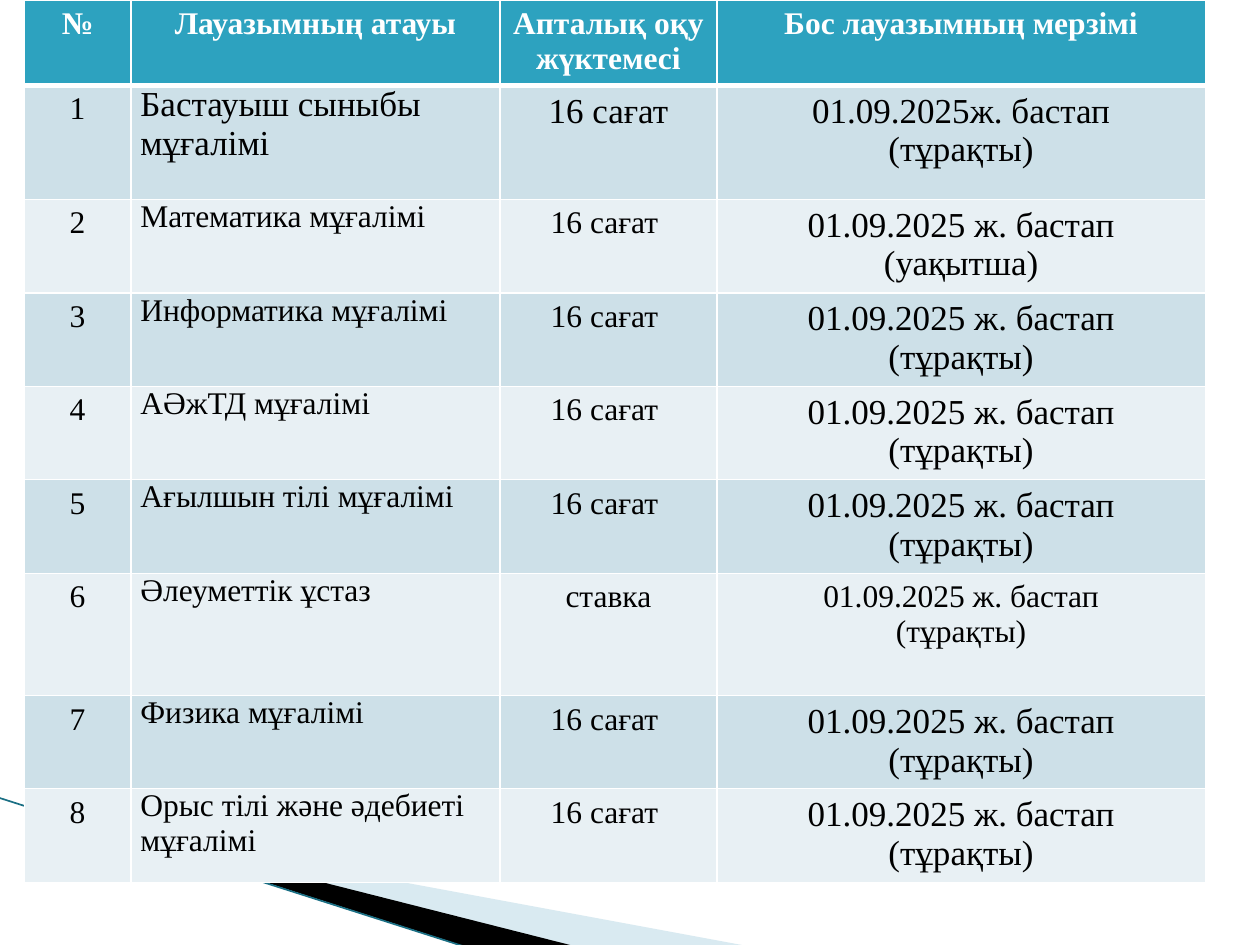
import pptx
import pptx.dml.color
import pptx.enum.shapes
import pptx.enum.text
import pptx.oxml
import pptx.oxml.ns
import pptx.util
from pptx.dml.color import RGBColor
from pptx.util import Cm, Pt

WHITE = RGBColor(0xFF, 0xFF, 0xFF)
BLACK = RGBColor(0, 0, 0)
TEAL = RGBColor(0x2D, 0xA2, 0xBF)
ROW_FILLS = [RGBColor(0xCD, 0xE0, 0xE8), RGBColor(0xE8, 0xF0, 0xF4)]
PALE_BLUE = RGBColor(0xA0, 0xCB, 0xDC)
DARK_TEAL = RGBColor(0x1A, 0x6F, 0x84)
FONT = "Times New Roman"

# Content: post, weekly load, term, then the point sizes of those three
HEADER = ["№", "Лауазымның атауы", "Апталық оқу жүктемесі", "Бос лауазымның мерзімі"]
HOURS = "16 сағат "
PERMANENT = "01.09.2025 ж. бастап\n(тұрақты)"
TEMPORARY = "01.09.2025 ж. бастап\n(уақытша)"
USUAL = (18, 18, 20)
VACANCIES = [
    ("Бастауыш сыныбы мұғалімі", "16 сағат", "01.09.2025ж. бастап\n(тұрақты)", (20, 20, 20)),
    ("Математика мұғалімі", HOURS, TEMPORARY, USUAL),
    ("Информатика мұғалімі", HOURS, PERMANENT, USUAL),
    ("АӘжТД мұғалімі", HOURS, PERMANENT, USUAL),
    ("Ағылшын тілі мұғалімі", HOURS, PERMANENT, USUAL),
    ("Әлеуметтік ұстаз", "ставка", PERMANENT, (18, 18, 18)),
    ("Физика мұғалімі", HOURS, PERMANENT, USUAL),
    ("Орыс тілі және әдебиеті мұғалімі", HOURS, PERMANENT, USUAL),
]
COLUMN_WIDTHS = [2.15, 7.44, 4.37, 9.85]
ROW_HEIGHTS = [1.72, 2.3, 1.89, 1.88, 1.88, 1.89, 2.46, 1.88, 1.89]

# Corner decoration, in cm: frame, outline, colour, opacity in percent
BANDS = [
    ((1.98, 13.89, 10.57, 4.01),
     [(1.4, 16.54), (15.11, 19.08), (11.58, 19.08), (1.4, 16.51)], PALE_BLUE, 40),
    ((-0.15, 16.08, 10.57, 2.34),
     [(1.35, 16.48), (11.61, 19.08), (9.45, 19.1), (1.37, 16.51)], BLACK, 100),
]


def draw_band(slide, frame, outline, color, opacity):
    points = [(Cm(x), Cm(y)) for x, y in outline]
    builder = slide.shapes.build_freeform(*points[0])
    builder.add_line_segments(points[1:])
    band = builder.convert_to_shape()
    band.shadow.inherit = False
    band.line.fill.background()
    band.fill.solid()
    band.fill.fore_color.rgb = color

    # The outline runs past its frame, so its points are counted from the frame
    band.left, band.top, band.width, band.height = map(Cm, frame)
    outline_path = band._element.spPr.find(".//" + pptx.oxml.ns.qn("a:path"))
    outline_path.set("w", str(int(band.width)))
    outline_path.set("h", str(int(band.height)))
    corners = outline_path.findall(".//" + pptx.oxml.ns.qn("a:pt"))
    for corner, (x, y) in zip(corners, points + points[:1]):
        corner.set("x", str(int(x - band.left)))
        corner.set("y", str(int(y - band.top)))

    if opacity < 100:
        srgb = band._element.spPr.find(".//" + pptx.oxml.ns.qn("a:srgbClr"))
        srgb.append(pptx.oxml.parse_xml(
            f'<a:alpha {pptx.oxml.ns.nsdecls("a")} val="{opacity * 1000}"/>'))


def set_borders(cell, row):
    widths = {"L": 1, "R": 1, "T": 3 if row == 1 else 1, "B": 3 if row == 0 else 1}
    properties = cell._tc.get_or_add_tcPr()
    for side, width in widths.items():
        properties.append(pptx.oxml.parse_xml(
            f'<a:ln{side} {pptx.oxml.ns.nsdecls("a")} w="{Pt(width)}">'
            f'<a:solidFill><a:srgbClr val="{WHITE}"/></a:solidFill></a:ln{side}>'))


def fill_cell(cell, row, column, text, size):
    is_header = row == 0
    is_post = column == 1 and not is_header
    set_borders(cell, row)
    cell.fill.solid()
    cell.fill.fore_color.rgb = TEAL if is_header else ROW_FILLS[(row - 1) % 2]
    cell.margin_left = cell.margin_right = Cm(0.19 if is_post else 0.24)
    cell.margin_top = cell.margin_bottom = Cm(0 if is_post else 0.13)
    cell.text_frame.text = text
    align = pptx.enum.text.PP_ALIGN
    for paragraph in cell.text_frame.paragraphs:
        paragraph.alignment = align.LEFT if is_post else align.CENTER
        for run in paragraph.runs:
            run.font.name = FONT
            run.font.size = Pt(size)
            run.font.bold = is_header
            run.font.color.rgb = WHITE if is_header else BLACK


def main():
    deck = pptx.Presentation()
    deck.slide_width, deck.slide_height = Cm(25.4), Cm(19.05)
    slide = deck.slides.add_slide(deck.slide_layouts[6])

    # Decoration behind the table
    for band in BANDS:
        draw_band(slide, *band)
    edge = slide.shapes.add_connector(
        pptx.enum.shapes.MSO_CONNECTOR.STRAIGHT, Cm(-0.03), Cm(16.08), Cm(9.42), Cm(19.1))
    edge.line.color.rgb = DARK_TEAL
    edge.line.width = Pt(0.95)
    edge._element.spPr.append(
        pptx.oxml.parse_xml(f'<a:effectLst {pptx.oxml.ns.nsdecls("a")}/>'))

    # Table of vacancies
    rows = [(HEADER, [18] * 4)]
    for number, (post, load, term, sizes) in enumerate(VACANCIES, 1):
        rows.append(([str(number), post, load, term], [18, *sizes]))
    table = slide.shapes.add_table(
        len(rows), len(HEADER), Cm(0.49), Cm(0),
        Cm(sum(COLUMN_WIDTHS)), Cm(sum(ROW_HEIGHTS))).table
    for column, width in zip(table.columns, COLUMN_WIDTHS):
        column.width = Cm(width)
    for table_row, height in zip(table.rows, ROW_HEIGHTS):
        table_row.height = Cm(height)
    for r, (texts, sizes) in enumerate(rows):
        for c, (text, size) in enumerate(zip(texts, sizes)):
            fill_cell(table.cell(r, c), r, c, text, size)

    deck.save("out.pptx")


if __name__ == "__main__":
    main()
